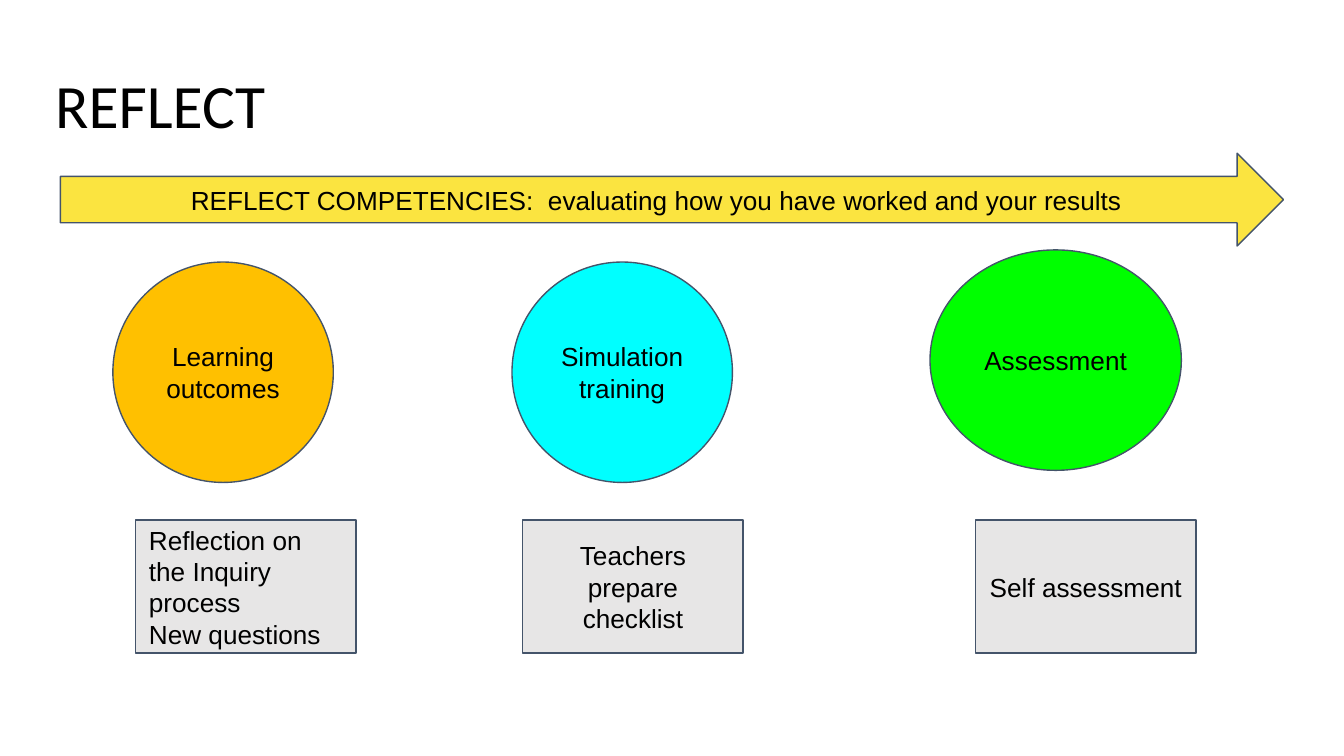
from pptx import Presentation
from pptx import util as u
from pptx.dml.color import RGBColor
from pptx.enum import shapes, text

WIDTH = 10
HEIGHT = WIDTH * 9 / 16
MARGIN = 0.45
SIZE = 1.64  # circle height and box width
CIRCLE_TOP, BOX_TOP, BOX_HEIGHT = 1.95, 3.87, 0.99
BLACK, OUTLINE, YELLOW, GREY = "000000", "44546A", "FBE440", "E7E6E6"
CENTER, LEFT = text.PP_ALIGN.CENTER, text.PP_ALIGN.LEFT

TITLE = "REFLECT"
COMPETENCIES = "REFLECT COMPETENCIES:  evaluating how you have worked and your results "

# Label, colour, left, rise above the row, width
CIRCLES = [
    ("Learning outcomes", "FFC000", 0.84, 0, SIZE),
    ("Simulation training", "00FFFF", 3.81, 0, SIZE),
    ("Assessment", "00FF00", 6.92, 0.09, 1.87),
]
# Left, lines, alignment
BOXES = [
    (1.01, ["Reflection on the Inquiry process", "New questions"], LEFT),
    (3.89, ["Teachers prepare checklist"], CENTER),
    (7.26, ["Self assessment"], CENTER),
]


def rgb(color):
    return RGBColor.from_string(color)


def write(frame, lines, font, size, align, inset_x, inset_y):
    frame.word_wrap = True
    frame.auto_size = text.MSO_AUTO_SIZE.NONE
    frame.vertical_anchor = text.MSO_ANCHOR.MIDDLE
    frame.margin_left = frame.margin_right = u.Inches(inset_x)
    frame.margin_top = frame.margin_bottom = u.Inches(inset_y)
    frame.text = "\n".join(lines)
    for paragraph in frame.paragraphs:
        paragraph.alignment = align
        paragraph.font.name = font
        paragraph.font.size = u.Pt(size)
        paragraph.font.color.rgb = rgb(BLACK)


def add_part(kind, left, top, width, height, fill, lines, align=CENTER):
    part = slide.shapes.add_shape(kind, *map(u.Inches, (left, top, width, height)))
    part.shadow.inherit = False
    part.fill.solid()
    part.fill.fore_color.rgb = rgb(fill)
    part.line.color.rgb = rgb(OUTLINE)
    part.line.width = u.Pt(0.75)
    write(part.text_frame, lines, "Arial", 14, align, 0.1, 0.1)


prs = Presentation()
prs.slide_width, prs.slide_height = u.Inches(WIDTH), u.Inches(HEIGHT)
slide = prs.slides.add_slide(prs.slide_layouts.get_by_name("Title Only"))

# Title
title = slide.shapes.title
title.left, title.top = u.Inches(0.34), u.Inches(0.49)
title.width, title.height = u.Inches(WIDTH - 2 * 0.34), u.Inches(0.63)
write(title.text_frame, [TITLE], "Calibri", 33, LEFT, 0.07, 0.04)
title.text_frame.paragraphs[0].line_spacing = 0.9

# Stage circles
for label, color, left, rise, width in CIRCLES:
    add_part(shapes.MSO_SHAPE.OVAL, left, CIRCLE_TOP - rise, width, SIZE, color, [label])

# Competencies arrow
add_part(shapes.MSO_SHAPE.RIGHT_ARROW, MARGIN, 1.14, WIDTH - 2 * MARGIN, 0.69,
         YELLOW, [COMPETENCIES])

# Activity boxes
for left, lines, align in BOXES:
    add_part(shapes.MSO_SHAPE.RECTANGLE, left, BOX_TOP, SIZE, BOX_HEIGHT,
             GREY, lines, align)

prs.save("out.pptx")
